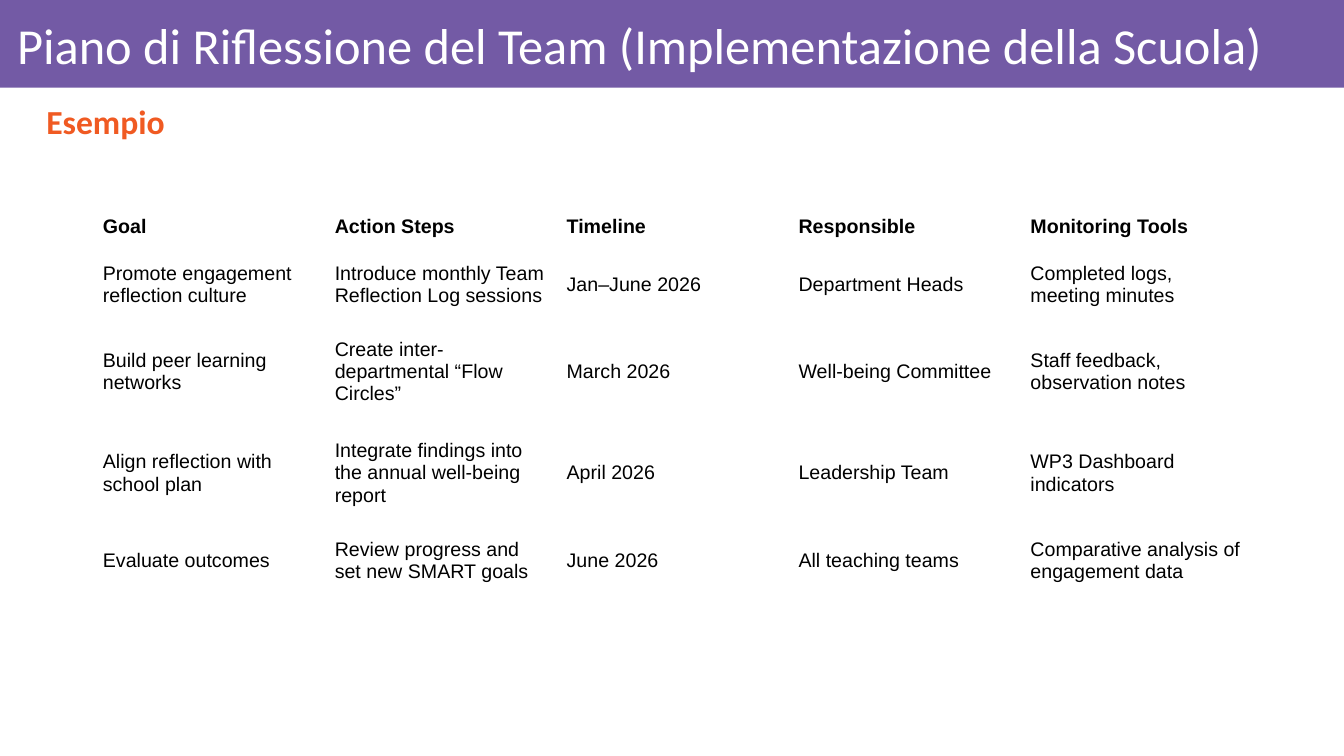
from pptx import Presentation
from pptx.dml.color import RGBColor
from pptx.enum.shapes import MSO_SHAPE as Shape
from pptx.enum.text import MSO_ANCHOR as Anchor, PP_ALIGN as Align
from pptx.util import Inches, Pt

ROWS = [
    ["Goal", "Action Steps", "Timeline", "Responsible", "Monitoring Tools"],
    ["Promote engagement reflection culture",
     "Introduce monthly Team Reflection Log sessions",
     "Jan–June 2026", "Department Heads", "Completed logs, meeting minutes"],
    ["Build peer learning networks",
     "Create inter-departmental “Flow Circles”",
     "March 2026", "Well-being Committee", "Staff feedback, observation notes"],
    ["Align reflection with school plan",
     "Integrate findings into the annual well-being report",
     "April 2026", "Leadership Team", "WP3 Dashboard indicators"],
    ["Evaluate outcomes", "Review progress and set new SMART goals",
     "June 2026", "All teaching teams", "Comparative analysis of engagement data"],
]
ROW_HEIGHTS = [0.42, 0.72, 1.01, 1.01, 0.72]
COLUMN_WIDTH = 2.3


def color(value):
    return RGBColor.from_string(value)


def write(frame, text, font="Calibri", size=14, ink="000000", bold=False,
          align=Align.LEFT, spacing=1.0):
    para = frame.paragraphs[0]
    para.alignment = align
    para.line_spacing = spacing
    span = para.add_run()
    span.text = text
    span.font.name = font
    span.font.size = Pt(size)
    span.font.bold = bold
    span.font.color.rgb = color(ink)


class PlanSlide:
    purple = "735AA5"
    orange = "F05A22"
    white = "FFFFFF"

    def __init__(self, deck):
        self.page = deck.slides.add_slide(deck.slide_layouts[6])

    def band(self, left, top, width, height):
        bar = self.page.shapes.add_shape(
            Shape.RECTANGLE, *map(Inches, (left, top, width, height)))
        bar.shadow.inherit = False
        bar.fill.solid()
        bar.fill.fore_color.rgb = color(self.purple)
        bar.line.fill.background()

    def text(self, text, left, top, width, height, inset=0.1, **style):
        box = self.page.shapes.add_textbox(
            *map(Inches, (left, top, width, height)))
        frame = box.text_frame
        frame.word_wrap = True
        frame.vertical_anchor = Anchor.MIDDLE
        frame.margin_left = Inches(inset)
        write(frame, text, **style)

    def table(self, rows, left, top, column_width, row_heights):
        columns = len(rows[0])
        table = self.page.shapes.add_table(
            len(rows), columns, Inches(left), Inches(top),
            Inches(column_width * columns), Inches(sum(row_heights))).table
        table.first_row = table.horz_banding = False
        for column in table.columns:
            column.width = Inches(column_width)
        for index, (words, height) in enumerate(zip(rows, row_heights)):
            table.rows[index].height = Inches(height)
            for cell, word in zip(table.rows[index].cells, words):
                cell.fill.background()
                cell.vertical_anchor = Anchor.MIDDLE
                write(cell.text_frame, word, font="Arial", bold=index == 0)


def main():
    deck = Presentation()
    deck.slide_width, deck.slide_height = Inches(13.33), Inches(7.5)
    slide = PlanSlide(deck)

    # Title band
    slide.band(0, 0, 13.33, 0.87)
    slide.text("Piano di Riflessione del Team (Implementazione della Scuola)",
               0.11, 0.09, 13.06, 0.78, inset=0.06,
               size=36, ink=slide.white, spacing=0.9)

    # Subtitle
    slide.text("Esempio", 0.11, 0.93, 13.06, 0.6, inset=0.35, size=24,
               ink=slide.orange, bold=True, align=Align.JUSTIFY, spacing=0.9)

    # Action plan
    slide.table(ROWS, 0.92, 2.04, COLUMN_WIDTH, ROW_HEIGHTS)

    deck.save("out.pptx")


if __name__ == "__main__":
    main()
